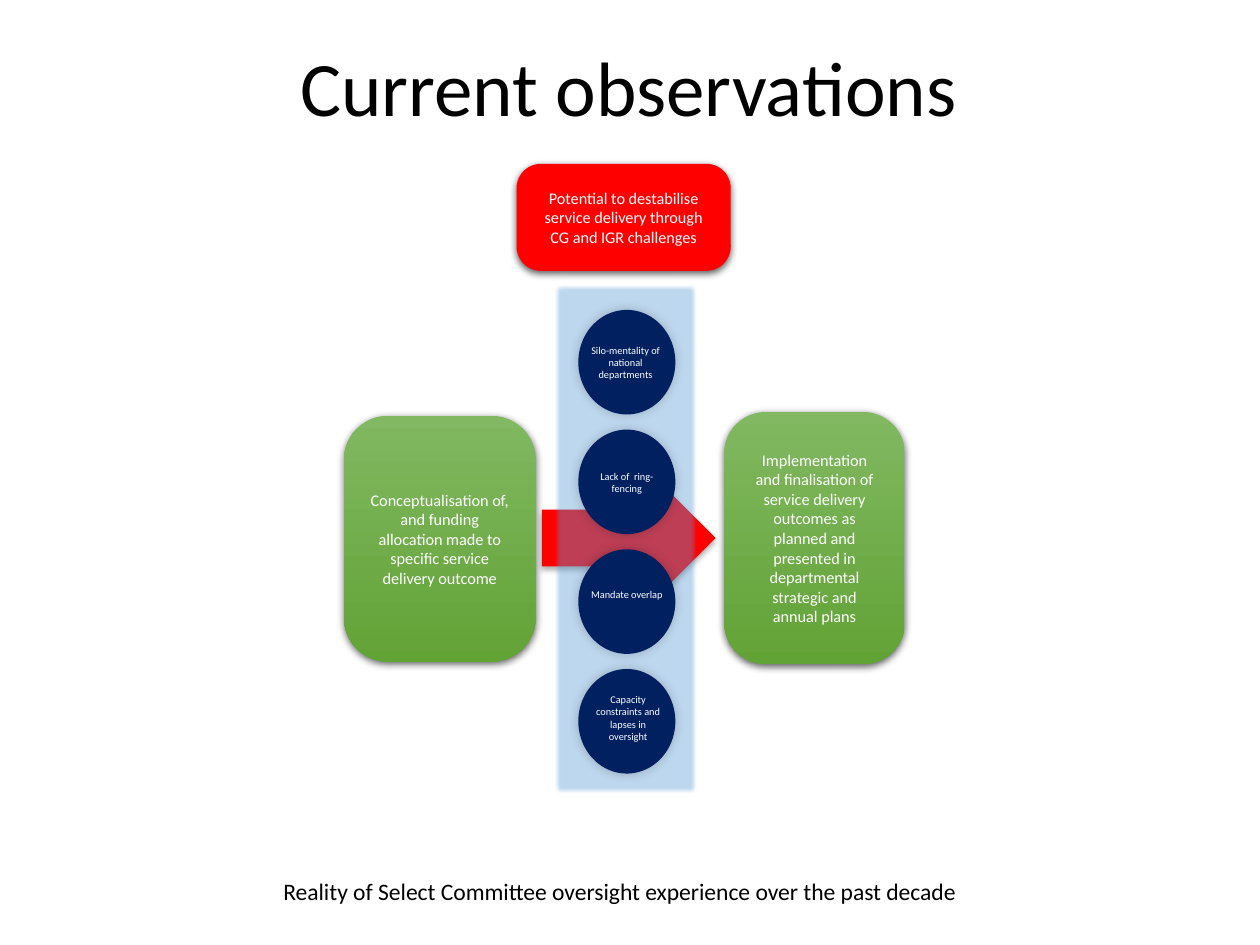
from lxml import etree
from pptx import Presentation
from pptx.dml.color import RGBColor
from pptx.enum.shapes import MSO_SHAPE
from pptx.enum.text import MSO_ANCHOR, PP_ALIGN
from pptx.oxml.ns import qn
from pptx.util import Inches, Pt

RECT, ROUND = MSO_SHAPE.RECTANGLE, MSO_SHAPE.ROUNDED_RECTANGLE
OVAL, ARROW = MSO_SHAPE.OVAL, MSO_SHAPE.RIGHT_ARROW
LEFT, CENTER = PP_ALIGN.LEFT, PP_ALIGN.CENTER
TOP, MIDDLE, BOTTOM = MSO_ANCHOR.TOP, MSO_ANCHOR.MIDDLE, MSO_ANCHOR.BOTTOM

RED, NAVY, BLUE = "FF0000", "002060", "5B9BD5"
WHITE, BLACK = "FFFFFF", "000000"
GREEN = ("81B861", "62A336")

# Shadows: opacity %, blur pt, distance pt, angle
ARROW_SHADE = (32, 3.5, 2.2, 90)
DISC_SHADE = (20, 6, 0, 315)
CARD_SHADE = (63, 4.5, 1.5, 90)


def color(code):
    return RGBColor.from_string(code)


def node(parent, tag, **attrs):
    return etree.SubElement(parent, qn(tag), {k: str(v) for k, v in attrs.items()})


def write(shape, text, size=9.3, tint=WHITE, align=CENTER, anchor=MIDDLE, lead=None):
    frame = shape.text_frame
    frame.word_wrap = True
    frame.vertical_anchor = anchor
    para = frame.paragraphs[0]
    para.alignment = align
    if lead:
        para.line_spacing = lead
    run = para.add_run()
    run.text = text
    run.font.name = "Calibri"
    run.font.size = Pt(size)
    run.font.color.rgb = color(tint)


class Deck:
    """Holds the current slide and draws each kind of element on it."""

    def __init__(self):
        self.prs = Presentation()
        self.prs.slide_width, self.prs.slide_height = Inches(10), Inches(7.5)
        self.slide = self.prs.slides.add_slide(self.prs.slide_layouts[6])

    def shape(self, kind, box, fill, shade=None):
        """Draw a preset shape; a pair of colours gives a vertical gradient."""
        item = self.slide.shapes.add_shape(kind, *map(Inches, box))
        item.shadow.inherit = False
        item.line.fill.background()
        if isinstance(fill, tuple):
            item.fill.gradient()
            item.fill.gradient_angle = 270
            for stop, code in zip(item.fill.gradient_stops, fill):
                stop.color.rgb = color(code)
        else:
            item.fill.solid()
            item.fill.fore_color.rgb = color(fill)
        if shade:
            self.shade(item, *shade)
        return item

    def shade(self, item, alpha, blur, dist, angle):
        effects = item._element.spPr.find(qn("a:effectLst"))
        outer = node(effects, "a:outerShdw", blurRad=Pt(blur), dist=Pt(dist),
                     dir=angle * 60000, algn="ctr", rotWithShape=0)
        tone = node(outer, "a:srgbClr", val=BLACK)
        node(tone, "a:alpha", val=alpha * 1000)

    def band(self, box):
        """Draw the see-through, soft-edged upright strip."""
        item = self.shape(RECT, box, BLUE)
        item.rotation = 90
        props = item._element.spPr
        tone = props.find(qn("a:solidFill")).find(qn("a:srgbClr"))
        node(tone, "a:alpha", val=40000)
        node(props.find(qn("a:effectLst")), "a:softEdge", rad=Pt(2.5))

    def card(self, box, fill, text):
        item = self.shape(ROUND, box, fill, CARD_SHADE)
        item.adjustments[0] = 0.228
        write(item, text)

    def text(self, box, text, **style):
        write(self.slide.shapes.add_textbox(*map(Inches, box)), text, **style)


def main():
    deck = Deck()
    deck.shape(ARROW, (4.3, 3.82, 1.38, 0.9), RED, ARROW_SHADE)
    deck.band((2.93, 3.7, 4.07, 1.16))

    issues = [
        ("Silo-mentality of national departments", 4.58, 2.68, 0.61),
        ("Lack of  ring-fencing", 4.59, 3.68, 0.37),
        ("Mandate overlap", 4.59, 4.62, 0.37),
        ("Capacity constraints and lapses in oversight", 4.6, 5.45, 0.61),
    ]
    for i, (issue, left, top, high) in enumerate(issues):
        deck.shape(OVAL, (4.59, 2.46 + 0.95 * i, 0.77, 0.83), NAVY, DISC_SHADE)
        deck.text((left, top, 0.77, high), issue, size=5.9, anchor=TOP)

    deck.card((2.73, 3.3, 1.52, 1.95), GREEN,
              "Conceptualisation of, and funding allocation made to "
              "specific service delivery outcome")
    deck.card((5.75, 3.27, 1.43, 2), GREEN,
              "Implementation and finalisation of service delivery outcomes as "
              "planned and presented in departmental strategic and annual plans")
    deck.card((4.1, 1.3, 1.7, 0.85), RED,
              "Potential to destabilise service delivery through "
              "CG and IGR challenges")

    deck.text((2.15, 6.91, 5.69, 0.33),
              "Reality of Select Committee oversight experience over the past decade",
              size=13.5, tint=BLACK, align=LEFT, anchor=TOP)
    deck.text((0.68, 0.31, 8.62, 0.8), "Current observations",
              size=44, tint=BLACK, anchor=BOTTOM, lead=0.9)
    deck.prs.save("out.pptx")


if __name__ == "__main__":
    main()
